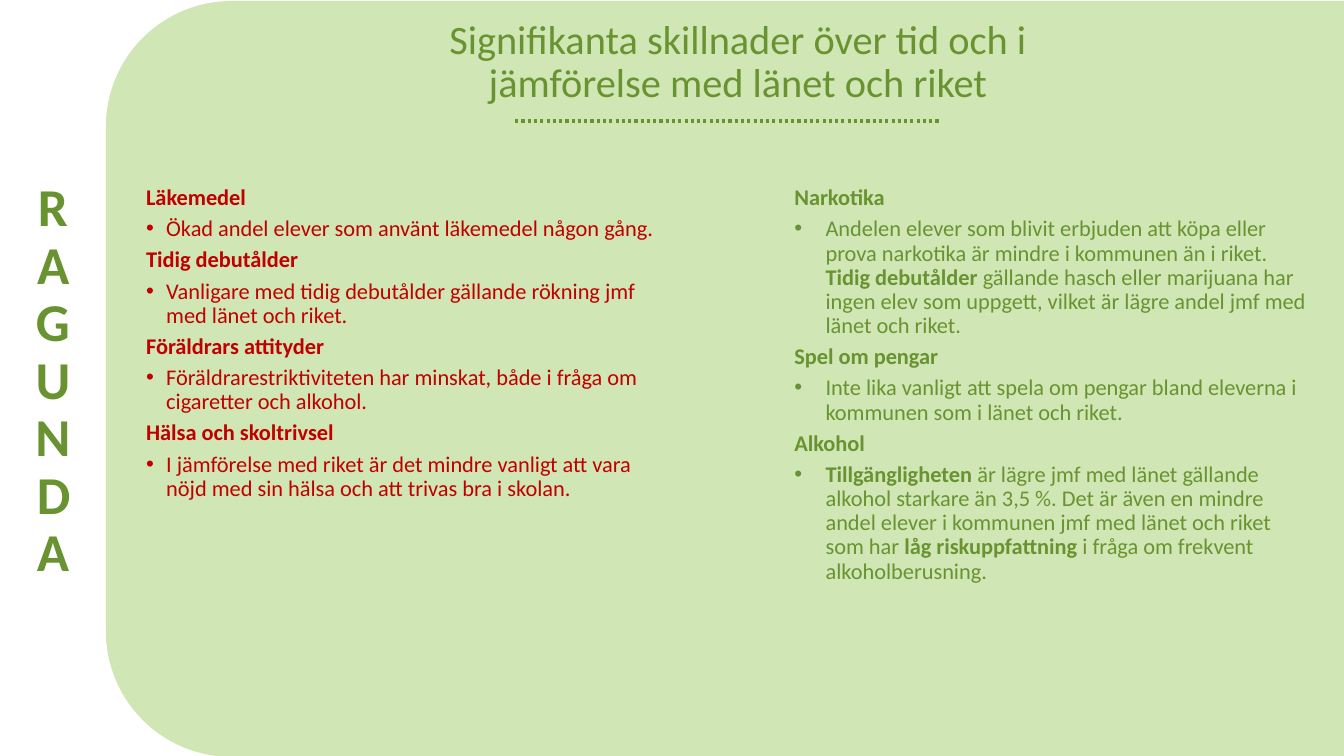
from lxml.etree import SubElement
from pptx import Presentation
from pptx.dml.color import RGBColor
from pptx.enum.dml import MSO_LINE
from pptx.enum.shapes import MSO_CONNECTOR, MSO_SHAPE
from pptx.enum.text import MSO_ANCHOR, PP_ALIGN
from pptx.oxml.ns import qn
from pptx.util import Inches, Pt

GREEN = RGBColor(0x69, 0x93, 0x31)
PALE_GREEN = RGBColor(0xD1, 0xE6, 0xB5)
RED = RGBColor(0xC0, 0x00, 0x00)

WORSE = [
    ("Läkemedel", "Ökad andel elever som använt läkemedel någon gång."),
    ("Tidig debutålder",
     "Vanligare med tidig debutålder gällande rökning jmf med länet och riket."),
    ("Föräldrars attityder",
     "Föräldrarestriktiviteten har minskat, både i fråga om cigaretter och alkohol."),
    ("Hälsa och skoltrivsel",
     "I jämförelse med riket är det mindre vanligt att vara nöjd med sin hälsa "
     "och att trivas bra i skolan."),
]
BETTER = [
    ("Narkotika",
     "Andelen elever som blivit erbjuden att köpa eller prova narkotika är mindre "
     "i kommunen än i riket. **Tidig debutålder **gällande hasch eller marijuana har "
     "ingen elev som uppgett, vilket är lägre andel jmf med länet och riket."),
    ("Spel om pengar",
     "Inte lika vanligt att spela om pengar bland eleverna i kommunen som i länet "
     "och riket."),
    ("Alkohol",
     "**Tillgängligheten** är lägre jmf med länet gällande alkohol starkare än 3,5 %. "
     "Det är även en mindre andel elever i kommunen jmf med länet och riket som har "
     "**låg riskuppfattning **i fråga om frekvent alkoholberusning."),
]


def write(paragraph, marked_text, size, color):
    """Fill a paragraph, setting the parts between ** marks in bold."""
    paragraph.line_spacing = 0.9
    for index, part in enumerate(marked_text.split("**")):
        if part:
            run = paragraph.add_run()
            run.text = part
            run.font.name = "Calibri"
            run.font.size = Pt(size)
            run.font.bold = index % 2 == 1
            run.font.color.rgb = color


def write_findings(frame, findings, color, indent):
    """List each heading with its bulleted finding below it."""
    frame.word_wrap = True
    frame.vertical_anchor = MSO_ANCHOR.TOP
    lines = [line for heading, finding in findings
             for line in ((f"**{heading}**", False), (finding, True))]
    for index, (text, bulleted) in enumerate(lines):
        paragraph = frame.add_paragraph() if index else frame.paragraphs[0]
        paragraph.alignment = PP_ALIGN.LEFT
        paragraph.space_before = Pt(5)
        write(paragraph, text, 16, color)
        if bulleted:
            properties = paragraph._p.get_or_add_pPr()
            properties.set("marL", str(Inches(indent)))
            properties.set("indent", str(-Inches(indent)))
            SubElement(properties, qn("a:buFont")).set("typeface", "Arial")
            SubElement(properties, qn("a:buChar")).set("char", "•")


presentation = Presentation()
presentation.slide_width = Inches(13.33)
presentation.slide_height = Inches(7.5)
slide = presentation.slides.add_slide(presentation.slide_layouts[6])
shapes = slide.shapes

SIDEBAR = Inches(1.05)
COLUMN_TOP, COLUMN_WIDTH = Inches(1.8), Inches(5.29)

# Green panel, running past the right edge so only its left corners look round
panel = shapes.add_shape(MSO_SHAPE.ROUNDED_RECTANGLE, SIDEBAR, Inches(0.01),
                         Inches(13.56), presentation.slide_height)
worse = shapes.add_shape(MSO_SHAPE.RECTANGLE, Inches(1.35), COLUMN_TOP,
                         COLUMN_WIDTH, Inches(5.13))
for area in (panel, worse):
    area.shadow.inherit = False
    area.fill.solid()
    area.fill.fore_color.rgb = PALE_GREEN
    area.line.fill.background()

# Municipality name, stacked letter by letter
municipality = shapes.add_textbox(0, Inches(0.14), SIDEBAR, Inches(7.3)).text_frame
municipality.word_wrap = True
municipality.vertical_anchor = MSO_ANCHOR.BOTTOM
municipality._txBody.bodyPr.set("vert", "wordArtVert")
municipality.paragraphs[0].alignment = PP_ALIGN.CENTER
write(municipality.paragraphs[0], "**RAGUNDA**", 38, GREEN)

# Findings
better = shapes.add_textbox(Inches(7.78), COLUMN_TOP, COLUMN_WIDTH, Inches(4.09))
write_findings(worse.text_frame, WORSE, RED, 0.2)
write_findings(better.text_frame, BETTER, GREEN, 0.31)

# Title with dotted rule
rule = shapes.add_connector(MSO_CONNECTOR.STRAIGHT, Inches(5.11), Inches(1.2),
                            Inches(9.32), Inches(1.2))
rule.line.color.rgb = GREEN
rule.line.width = Pt(2.25)
rule.line.dash_style = MSO_LINE.ROUND_DOT
SubElement(rule._element.spPr, qn("a:effectLst"))

title = shapes.add_textbox(Inches(4.33), Inches(0.18), Inches(5.98),
                           Inches(0.89)).text_frame
title.word_wrap = True
title.vertical_anchor = MSO_ANCHOR.MIDDLE
title.paragraphs[0].alignment = PP_ALIGN.CENTER
write(title.paragraphs[0],
      "Signifikanta skillnader över tid och i jämförelse med länet och riket",
      28.8, GREEN)

presentation.save("out.pptx")
